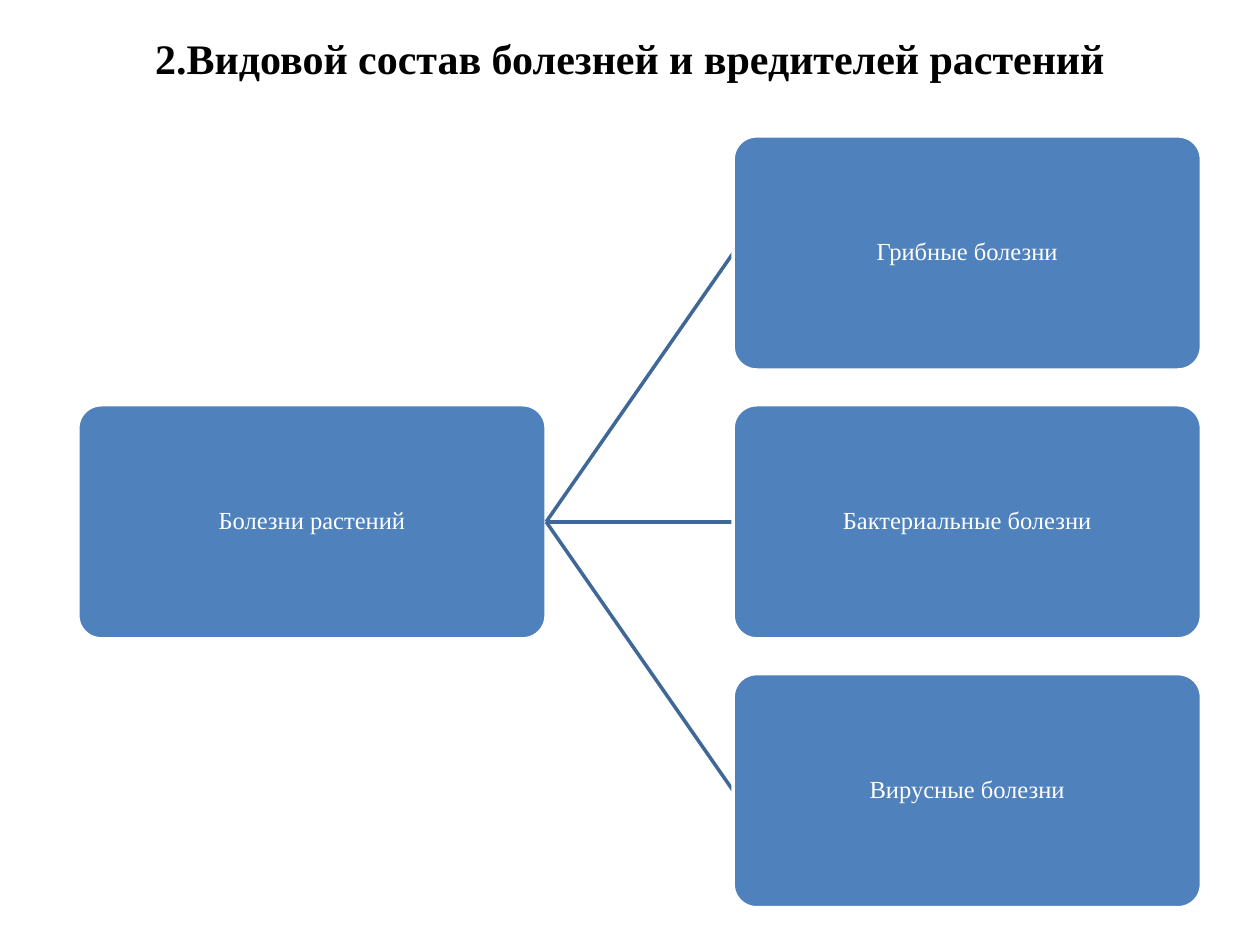
"""Build a slide that splits plant diseases into three groups."""
from dataclasses import dataclass

from lxml.etree import SubElement
from pptx import Presentation
from pptx.dml.color import RGBColor as Rgb
from pptx.enum.shapes import MSO_CONNECTOR as Link, MSO_SHAPE as Shape
from pptx.enum.text import MSO_ANCHOR as Anchor, MSO_AUTO_SIZE as AutoSize, PP_ALIGN as Align
from pptx.oxml.ns import qn
from pptx.util import Cm, Pt


@dataclass(frozen=True)
class Theme:
    font: str = "Times New Roman"
    ink: Rgb = Rgb(0, 0, 0)
    paper: Rgb = Rgb(255, 255, 255)
    card: Rgb = Rgb(0x4F, 0x81, 0xBD)
    branch: Rgb = Rgb(0x3F, 0x67, 0x97)
    heading_size: Pt = Pt(24)
    card_size: Pt = Pt(14)
    stroke: Pt = Pt(2)


theme = Theme()
card_width, card_height = Cm(9.44), Cm(4.72)
root_left, group_left = Cm(1.57), Cm(14.78)
first_top, pitch = Cm(2.74), Cm(5.42)
root_top = first_top + pitch
groups = ["Грибные болезни", "Бактериальные болезни", "Вирусные болезни"]


def write(frame, text, size, color, bold=False):
    paragraph = frame.paragraphs[0]
    paragraph.alignment = Align.CENTER
    run = paragraph.add_run()
    run.text = text
    run.font.name = theme.font
    run.font.size = size
    run.font.bold = bold
    run.font.color.rgb = color
    return paragraph


def add_card(text, left, top):
    card = slide.shapes.add_shape(Shape.ROUNDED_RECTANGLE, left, top, card_width, card_height)
    card.adjustments[0] = 0.1
    card.shadow.inherit = False
    card.fill.solid()
    card.fill.fore_color.rgb = theme.card
    card.line.color.rgb = theme.paper
    card.line.width = theme.stroke
    frame = card.text_frame
    frame.word_wrap = True
    frame.vertical_anchor = Anchor.MIDDLE
    frame.margin_left = frame.margin_right = frame.margin_top = frame.margin_bottom = Cm(0.02)
    write(frame, text, theme.card_size, theme.paper).line_spacing = 0.9
    return card


deck = Presentation()
deck.slide_width, deck.slide_height = Cm(25.4), Cm(19.05)
slide = deck.slides.add_slide(deck.slide_layouts[6])

heading = slide.shapes.add_textbox(Cm(1.5), Cm(0.53), Cm(22.4), Cm(1.27))
heading.text_frame.word_wrap = True
heading.text_frame.auto_size = AutoSize.SHAPE_TO_FIT_TEXT
write(heading.text_frame, "2.Видовой состав болезней и вредителей растений",
      theme.heading_size, theme.ink, bold=True)

diseases = add_card("Болезни растений", root_left, root_top)
for row, name in enumerate(groups):
    top = first_top + row * pitch
    branch = slide.shapes.add_connector(
        Link.STRAIGHT, root_left + card_width, root_top + card_height // 2,
        group_left, top + card_height // 2)
    branch.line.color.rgb = theme.branch
    branch.line.width = theme.stroke
    SubElement(branch.element.spPr, qn("a:effectLst"))
    group = add_card(name, group_left, top)
    branch.begin_connect(diseases, 3)
    branch.end_connect(group, 1)

deck.save("out.pptx")
